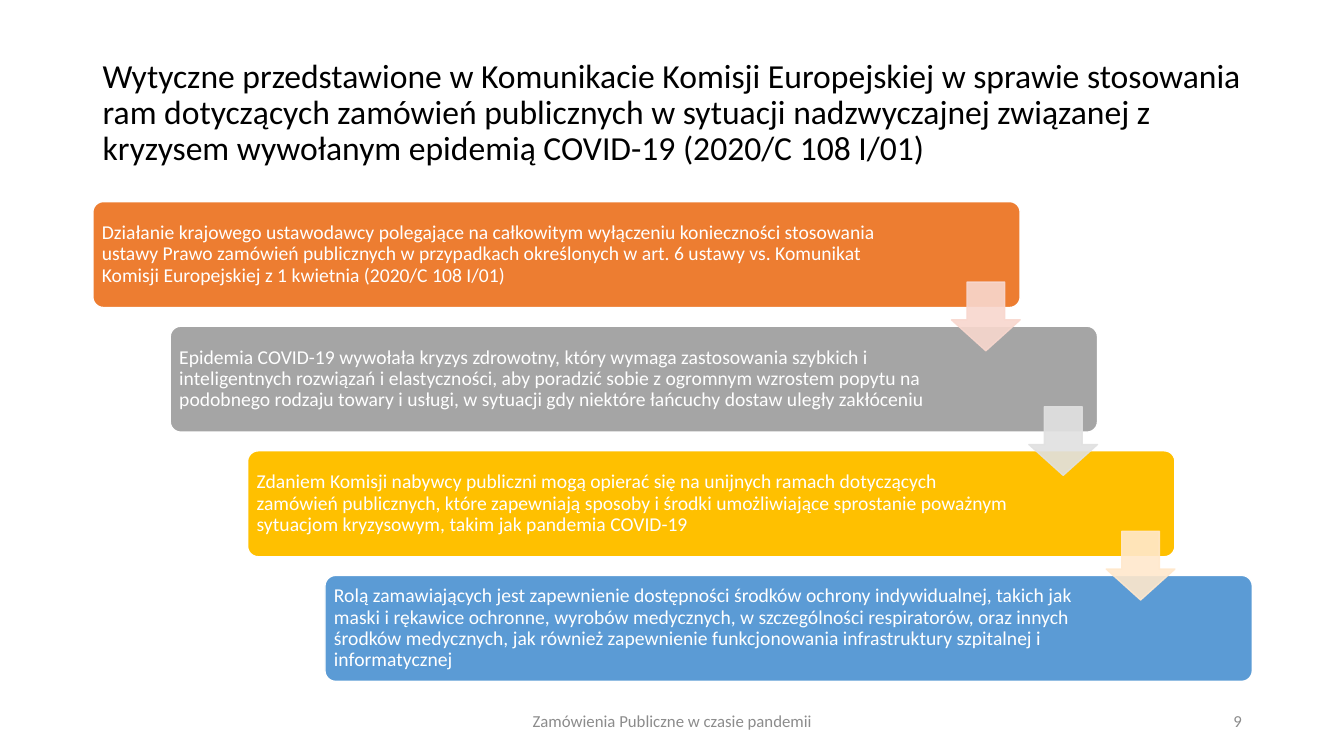
import pptx
import pptx.util
import pptx.dml.color
import pptx.enum.shapes
import pptx.enum.text
import pptx.oxml
import pptx.oxml.ns

Cm, Pt = pptx.util.Cm, pptx.util.Pt
SHAPE = pptx.enum.shapes.MSO_SHAPE
ALIGN = pptx.enum.text.PP_ALIGN

TITLE = (
    "Wytyczne przedstawione w Komunikacie Komisji Europejskiej w sprawie stosowania "
    "ram dotyczących zamówień publicznych w sytuacji nadzwyczajnej związanej z "
    "kryzysem wywołanym epidemią COVID-19 (2020/C 108 I/01)"
)
FOOTER = "Zamówienia Publiczne w czasie pandemii"
PAGE = "9"

# (box colour, colour of the arrow to the next step, right inset in cm, text)
STEPS = [
    ("orange", "pale_orange", 3.1,
     "Działanie krajowego ustawodawcy polegające na całkowitym wyłączeniu konieczności "
     "stosowania ustawy Prawo zamówień publicznych w przypadkach określonych w art. 6 "
     "ustawy vs. Komunikat Komisji Europejskiej z 1 kwietnia (2020/C 108 I/01)"),
    ("gray", "pale_gray", 3.84,
     "Epidemia COVID-19 wywołała kryzys zdrowotny, który wymaga zastosowania szybkich i "
     "inteligentnych rozwiązań i elastyczności, aby poradzić sobie z ogromnym wzrostem "
     "popytu na podobnego rodzaju towary i usługi, w sytuacji gdy niektóre łańcuchy "
     "dostaw uległy zakłóceniu"),
    ("yellow", "pale_yellow", 3.84,
     "Zdaniem Komisji nabywcy publiczni mogą opierać się na unijnych ramach dotyczących "
     "zamówień publicznych, które zapewniają sposoby i środki umożliwiające sprostanie "
     "poważnym sytuacjom kryzysowym, takim jak pandemia COVID-19"),
    ("blue", None, 3.84,
     "Rolą zamawiających jest zapewnienie dostępności środków ochrony indywidualnej, "
     "takich jak maski i rękawice ochronne, wyrobów medycznych, w szczególności "
     "respiratorów, oraz innych środków medycznych, jak również zapewnienie "
     "funkcjonowania infrastruktury szpitalnej i informatycznej"),
]

COLORS = {
    "black": "000000", "white": "FFFFFF", "footer": "8C8C8C",
    "orange": "ED7D31", "gray": "A5A5A5", "yellow": "FFC000", "blue": "5B9BD5",
    "pale_orange": "F8D7CE", "pale_gray": "E1E1E1", "pale_yellow": "FFE8CC",
}

# Lengths in cm
LEFT, TOP = 2.34, 5.08
STEP_X, STEP_Y = 1.95, 3.14
BOX_W, BOX_H = 23.37, 2.67
ARROW, ARROW_DROP = 1.73, 2.03
INSET = 0.15


def rgb(name):
    return pptx.dml.color.RGBColor.from_string(COLORS[name])


def write(sp, text, size, color, align=ALIGN.LEFT, spacing=None):
    tf = sp.text_frame
    tf.word_wrap = True
    tf.vertical_anchor = pptx.enum.text.MSO_ANCHOR.MIDDLE
    tf.text = text
    p = tf.paragraphs[0]
    p.alignment = align
    p.line_spacing = spacing
    font = p.runs[0].font
    font.name, font.size, font.color.rgb = "Calibri", Pt(size), rgb(color)


def add_text(slide, x, y, w, h, *style):
    write(slide.shapes.add_textbox(Cm(x), Cm(y), Cm(w), Cm(h)), *style)


def add_block(slide, kind, x, y, w, h, fill, line, adjustments):
    sp = slide.shapes.add_shape(kind, Cm(x), Cm(y), Cm(w), Cm(h))
    sp.shadow.inherit = False
    for i, value in enumerate(adjustments):
        sp.adjustments[i] = value
    sp.fill.solid()
    sp.fill.fore_color.rgb = rgb(fill)
    sp.line.color.rgb = rgb(line)
    sp.line.width = Pt(1)
    return sp


def set_opacity(sp, percent):
    """Apply the opacity to both the fill and the outline."""
    for clr in sp._element.spPr.iter(pptx.oxml.ns.qn("a:srgbClr")):
        alpha = pptx.oxml.parse_xml(
            f'<a:alpha {pptx.oxml.ns.nsdecls("a")} val="{percent * 1000}"/>')
        clr.append(alpha)


def add_step(slide, i, fill, right_inset, text):
    sp = add_block(slide, SHAPE.ROUNDED_RECTANGLE, LEFT + i * STEP_X, TOP + i * STEP_Y,
                   BOX_W, BOX_H, fill, "white", [0.1])
    tf = sp.text_frame
    tf.margin_left = tf.margin_top = tf.margin_bottom = Cm(INSET)
    tf.margin_right = Cm(right_inset)
    write(sp, text, 14, "white", ALIGN.LEFT, 0.9)


def add_arrow(slide, i, color):
    """Put an arrow at the right edge of box i, reaching into the next box."""
    sp = add_block(slide, SHAPE.DOWN_ARROW, LEFT + i * STEP_X + BOX_W - ARROW,
                   TOP + i * STEP_Y + ARROW_DROP, ARROW, ARROW, color, color, [0.45, 0.55])
    # The preset lists the head length after the shaft width
    sp.adjustments[0], sp.adjustments[1] = 0.55, 0.45
    set_opacity(sp, 90)


def main():
    prs = pptx.Presentation()
    prs.slide_width, prs.slide_height = Cm(33.87), Cm(19.05)
    slide = prs.slides.add_slide(prs.slide_layouts[6])

    add_text(slide, LEFT, 1.02, 29.21, 3.68, TITLE, 24, "black", ALIGN.LEFT, 0.9)
    add_text(slide, 11.23, 17.65, 11.43, 1.02, FOOTER, 12, "footer", ALIGN.CENTER)
    add_text(slide, 23.93, 17.65, 7.62, 1.02, PAGE, 12, "footer", ALIGN.RIGHT)

    for i, (fill, _, right_inset, text) in enumerate(STEPS):
        add_step(slide, i, fill, right_inset, text)
    for i, (_, color, _, _) in enumerate(STEPS):
        if color:
            add_arrow(slide, i, color)

    prs.save("out.pptx")


if __name__ == "__main__":
    main()
